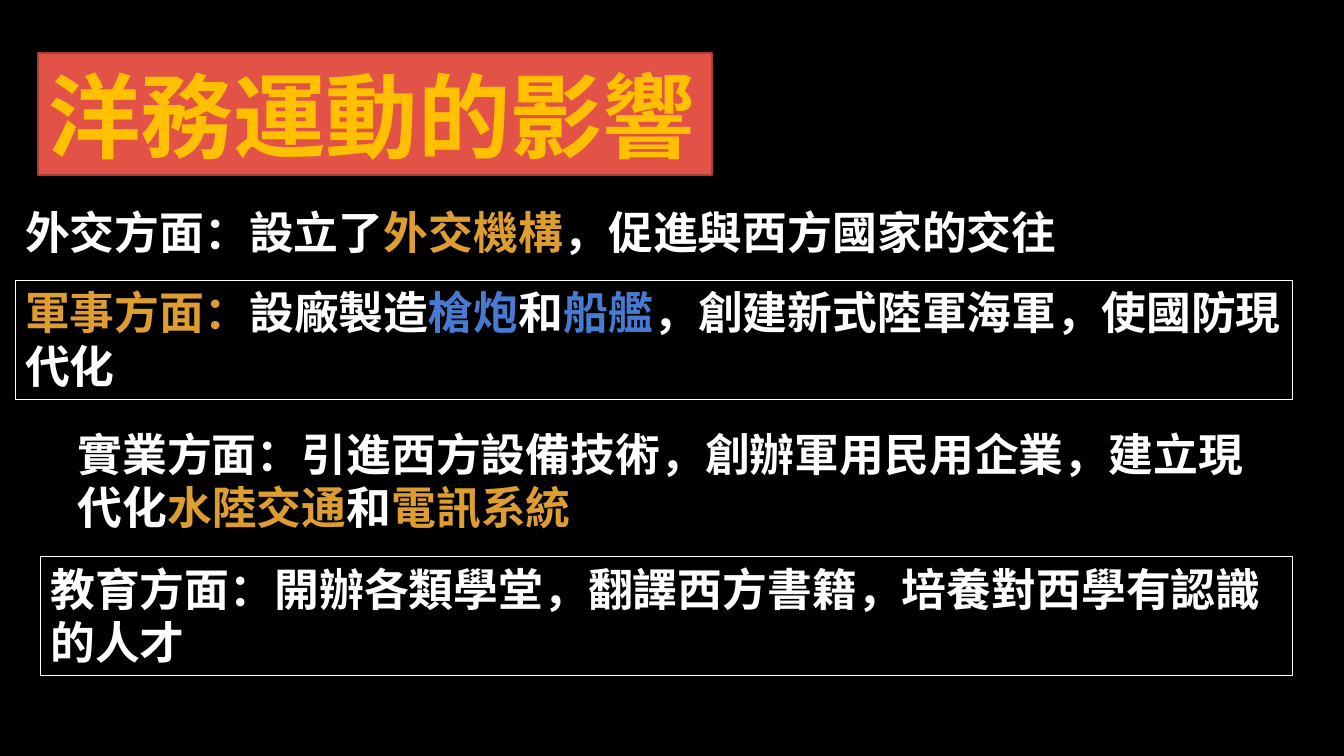
import pptx
import pptx.dml.color
import pptx.enum.shapes
import pptx.enum.text
import pptx.util
from lxml import etree
from pptx.util import Inches

FONT = "Noto Sans CJK SC"
COLORS = {
    "background": "000000",
    "white": "FFFFFF",
    "gold": "DD9D31",
    "blue": "477BD1",
    "title": "FFC000",
    "banner": "E25247",
    "banner_edge": "A73D35",
}
TITLE = "洋務運動的影響"
# Each impact: left, top, width, height, framed, (text, color) runs
IMPACTS = [
    (0.15, 1.98, 12.78, 0.64, False, [
        ("外交方面：設立了", "white"),
        ("外交機構", "gold"),
        ("，促進與西方國家的交往", "white"),
    ]),
    (0.15, 2.78, 12.67, 1.18, True, [
        ("軍事方面：", "gold"),
        ("設廠製造", "white"),
        ("槍炮", "blue"),
        ("和", "white"),
        ("船艦", "blue"),
        ("，創建新式陸軍海軍，使國防現代化", "white"),
    ]),
    (0.67, 4.18, 12, 1.18, False, [
        ("實業方面：引進西方設備技術，創辦軍用民用企業，建立現代化", "white"),
        ("水陸交通", "gold"),
        ("和", "white"),
        ("電訊系統", "gold"),
    ]),
    (0.4, 5.52, 12.42, 1.18, True, [
        ("教育方面：開辦各類學堂，翻譯西方書籍，培養對西學有認識的人才", "white"),
    ]),
]


def rgb(name):
    return pptx.dml.color.RGBColor.from_string(COLORS[name])


def write_runs(frame, runs, size):
    paragraph = frame.paragraphs[0]
    paragraph.alignment = pptx.enum.text.PP_ALIGN.LEFT
    for text, color in runs:
        run = paragraph.add_run()
        run.text = text
        run.font.size = pptx.util.Pt(size)
        run.font.bold = True
        run.font.color.rgb = rgb(color)
        run.font.name = FONT
        east_asian = etree.SubElement(
            run.font._element, pptx.oxml.ns.qn("a:ea"))
        east_asian.set("typeface", FONT)


def set_outline(shape, color, width):
    shape.line.color.rgb = rgb(color)
    shape.line.width = pptx.util.Pt(width)


def add_title(slide):
    title = slide.shapes.title
    title.left, title.top = Inches(0.38), Inches(0.53)
    title.width, title.height = Inches(6.68), Inches(1.21)
    title.fill.solid()
    title.fill.fore_color.rgb = rgb("banner")
    set_outline(title, "banner_edge", 1.5)
    frame = title.text_frame
    frame.word_wrap = False
    frame.auto_size = pptx.enum.text.MSO_AUTO_SIZE.NONE
    frame.vertical_anchor = pptx.enum.text.MSO_ANCHOR.MIDDLE
    write_runs(frame, [(TITLE, "title")], 66)


def add_impact(slide, left, top, width, height, framed, runs):
    bounds = [Inches(length) for length in (left, top, width, height)]
    if framed:
        impact = slide.shapes.add_shape(
            pptx.enum.shapes.MSO_SHAPE.RECTANGLE, *bounds)
        impact.shadow.inherit = False
        impact.fill.background()
        set_outline(impact, "white", 0.75)
    else:
        impact = slide.shapes.add_textbox(*bounds)
    frame = impact.text_frame
    frame.word_wrap = True
    frame.vertical_anchor = pptx.enum.text.MSO_ANCHOR.TOP
    write_runs(frame, runs, 32)


def main():
    deck = pptx.Presentation()
    deck.slide_width, deck.slide_height = Inches(13.33), Inches(7.5)
    slide = deck.slides.add_slide(deck.slide_layouts.get_by_name("Title Only"))
    slide.background.fill.solid()
    slide.background.fill.fore_color.rgb = rgb("background")
    add_title(slide)
    for impact in IMPACTS:
        add_impact(slide, *impact)
    deck.save("out.pptx")


if __name__ == "__main__":
    main()
